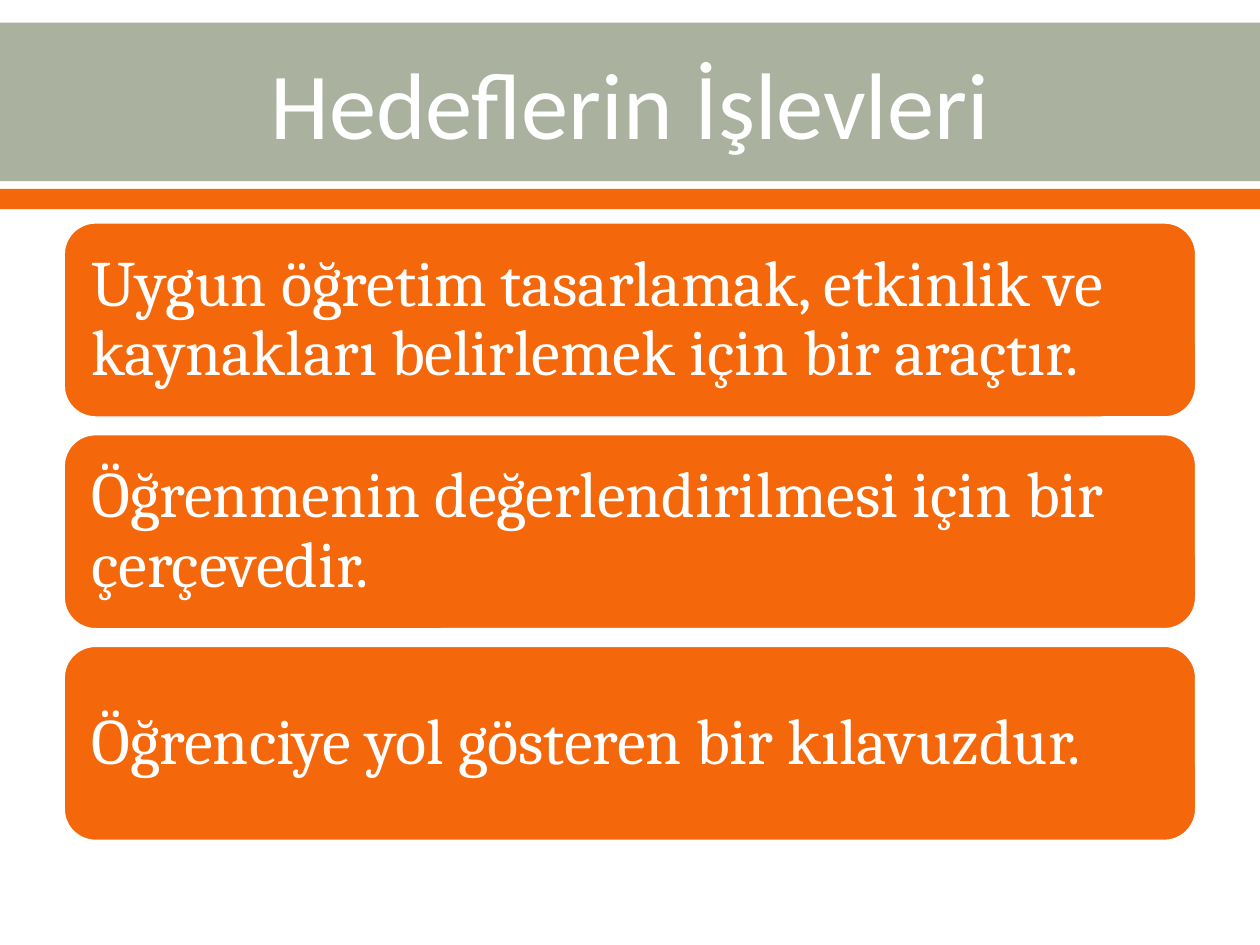
from pptx import Presentation
from pptx.dml.color import RGBColor
from pptx.enum.shapes import MSO_SHAPE
from pptx.enum.text import MSO_ANCHOR, PP_ALIGN
from pptx.util import Inches, Pt

RECT, ROUNDED = MSO_SHAPE.RECTANGLE, MSO_SHAPE.ROUNDED_RECTANGLE
MIDDLE = MSO_ANCHOR.MIDDLE
LEFT, CENTER = PP_ALIGN.LEFT, PP_ALIGN.CENTER
WHITE = RGBColor(0xFF, 0xFF, 0xFF)
SAGE = RGBColor(0xAB, 0xB1, 0x9F)
ORANGE = RGBColor(0xF4, 0x68, 0x0B)

WIDTH, HEIGHT = 10, 7.5
MARGIN = 0.05 * WIDTH
CARD_GAP = 0.12

TITLE = "Hedeflerin İşlevleri"
FUNCTIONS = [
    "Uygun öğretim tasarlamak, etkinlik ve kaynakları belirlemek için bir araçtır.",
    "Öğrenmenin değerlendirilmesi için bir çerçevedir.",
    "Öğrenciye yol gösteren bir kılavuzdur.",
]


def add_block(slide, kind, box, fill):
    sp = slide.shapes.add_shape(kind, *(Inches(v) for v in box))
    sp.shadow.inherit = False
    sp.fill.solid()
    sp.fill.fore_color.rgb = fill
    sp.line.fill.background()
    return sp


def write(sp, text, font, size, align):
    tf = sp.text_frame
    tf.word_wrap = True
    tf.vertical_anchor = MIDDLE
    p = tf.paragraphs[0]
    p.text = text
    p.alignment = align
    p.font.name = font
    p.font.size = Pt(size)
    p.font.color.rgb = WHITE
    return tf, p


def add_header(slide, box, title):
    left, top, width, height = box
    band = 0.85 * height
    stripe = 0.16
    add_block(slide, RECT, (left, top, width, band), SAGE)
    add_block(slide, RECT, (left, top + height - stripe, width, stripe), ORANGE)
    title_box = (left + MARGIN, top + 0.02, width - 2 * MARGIN, band - 0.04)
    sp = slide.shapes.add_textbox(*(Inches(v) for v in title_box))
    write(sp, title, "Calibri", 54, CENTER)


def add_cards(slide, box, texts):
    left, top, width, height = box
    card = (height - CARD_GAP * (len(texts) - 1)) / len(texts)
    for row, text in enumerate(texts):
        y = top + row * (card + CARD_GAP)
        sp = add_block(slide, ROUNDED, (left, y, width, card), ORANGE)
        sp.line.color.rgb = WHITE
        sp.line.width = Pt(2.22)
        tf, p = write(sp, text, "Cambria", 37, LEFT)
        tf.margin_left = tf.margin_right = Inches(0.15)
        tf.margin_top = tf.margin_bottom = Inches(0.15)
        p.line_spacing = 0.9


def main():
    prs = Presentation()
    prs.slide_width, prs.slide_height = Inches(WIDTH), Inches(HEIGHT)
    slide = prs.slides.add_slide(prs.slide_layouts[6])
    add_header(slide, (0, 0.18, WIDTH, 1.48), TITLE)
    add_cards(slide, (MARGIN, 1.76, WIDTH - 2 * MARGIN, 4.92), FUNCTIONS)
    prs.save("out.pptx")


if __name__ == "__main__":
    main()
